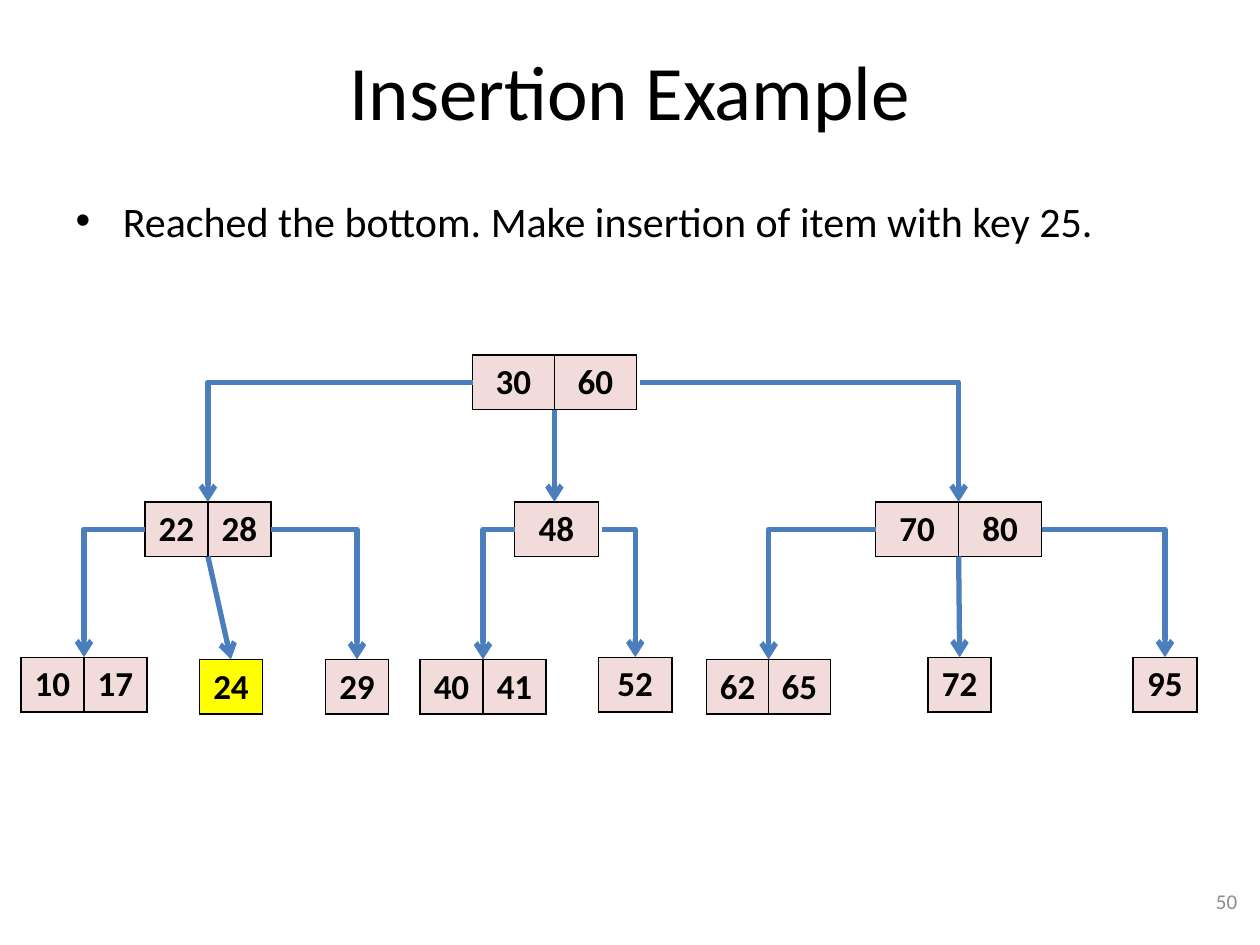
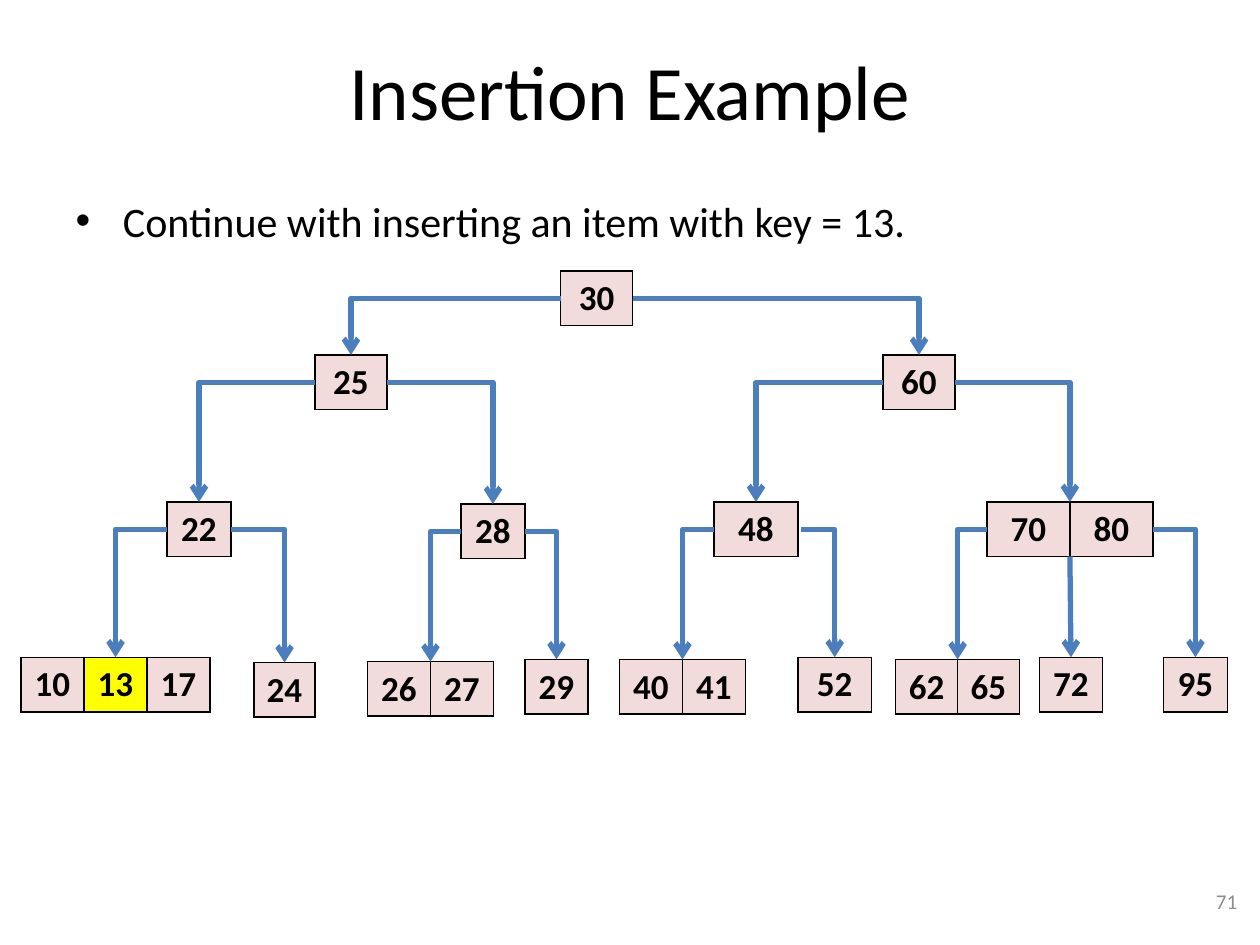
from dataclasses import dataclass

from lxml.etree import SubElement
from pptx import Presentation
from pptx.dml.color import RGBColor
from pptx.enum.shapes import MSO_CONNECTOR
from pptx.enum.text import MSO_ANCHOR, PP_ALIGN
from pptx.oxml.ns import qn
from pptx.util import Inches, Pt


@dataclass(frozen=True)
class Theme:
    font: str = "Calibri"
    ink: str = "000000"
    muted: str = "8C8C8C"
    key_fill: str = "F2DCDB"
    new_fill: str = "FFFF00"
    arrow: str = "4B7EBC"
    title_size: int = 44
    body_size: int = 24
    key_size: int = 20
    number_size: int = 12
    border_width: float = 1
    arrow_width: float = 3


@dataclass
class Node:
    """A tree node; lengths are in grid columns and rows."""
    keys: str
    left: float
    top: float
    cell: float = 6
    children: tuple = ()
    new_key: str = ""
    gap: float = 0    # space before the right-hand arrow
    entry: float = 0  # shift of the incoming arrow from the centre

    @property
    def right(self):
        return self.left + self.cell * len(self.keys.split())

    @property
    def center(self):
        return (self.left + self.right) / 2


# Grid: twelve units to the inch
COLUMNS, ROWS = 120, 90
ROW_HEIGHT, DRAWN_HEIGHT = 4.9, 5.2

# Tops of the tree levels
ROOT, UPPER, MIDDLE, LEAF, LOW_LEAF = 25.8, 33.8, 47.8, 62.6, 62.8


def write(frame, text, size, color=Theme.ink, bold=False, align=None, anchor=None):
    frame.word_wrap = True
    if anchor is not None:
        frame.vertical_anchor = anchor
    paragraph = frame.paragraphs[0]
    if align is not None:
        paragraph.alignment = align
    run = paragraph.add_run()
    run.text = text
    run.font.name = Theme.font
    run.font.size = Pt(size)
    run.font.bold = bold
    run.font.color.rgb = RGBColor.from_string(color)


class TreeDeck:
    def __init__(self, theme):
        self.theme = theme
        self.deck = Presentation()
        self.deck.slide_width, self.deck.slide_height = Inches(10), Inches(7.5)
        self.slide = None

    def x(self, columns):
        return round(self.deck.slide_width * columns / COLUMNS)

    def y(self, rows):
        return round(self.deck.slide_height * rows / ROWS)

    def box(self, left, top, width, height):
        return self.x(left), self.y(top), self.x(width), self.y(height)

    def place(self, holder, *area):
        holder.left, holder.top, holder.width, holder.height = self.box(*area)
        return holder.text_frame

    def add_slide(self, title, message, number):
        theme = self.theme
        self.slide = self.deck.slides.add_slide(self.deck.slide_layouts[1])
        heading, body = self.slide.placeholders
        write(self.place(heading, 6, 1, 108, 15), title, theme.title_size,
              align=PP_ALIGN.CENTER, anchor=MSO_ANCHOR.MIDDLE)
        write(self.place(body, 6, 18, 108, 66), message, theme.body_size)
        footer = self.slide.shapes.add_textbox(*self.box(91, 83.4, 28, 4.8))
        write(footer.text_frame, number, theme.number_size, color=theme.muted,
              align=PP_ALIGN.RIGHT, anchor=MSO_ANCHOR.MIDDLE)

    def border(self, cell):
        properties = cell._tc.get_or_add_tcPr()
        for side in ("lnL", "lnR", "lnT", "lnB"):
            line = SubElement(properties, qn(f"a:{side}"),
                              w=str(Pt(self.theme.border_width)))
            fill = SubElement(line, qn("a:solidFill"))
            SubElement(fill, qn("a:srgbClr"), val=self.theme.ink)

    def add_keys(self, node):
        theme, keys = self.theme, node.keys.split()
        table = self.slide.shapes.add_table(
            1, len(keys),
            *self.box(node.left, node.top, node.right - node.left, ROW_HEIGHT)).table
        table.first_row = table.horz_banding = False
        for column, key in enumerate(keys):
            table.columns[column].width = self.x(node.cell)
            cell = table.cell(0, column)
            self.border(cell)
            fill = theme.new_fill if key == node.new_key else theme.key_fill
            cell.fill.solid()
            cell.fill.fore_color.rgb = RGBColor.from_string(fill)
            write(cell.text_frame, key, theme.key_size, bold=True,
                  align=PP_ALIGN.CENTER)

    def add_arrow(self, start, end, bent):
        (x1, y1), (x2, y2) = start, end
        leftward = bent and x2 < x1
        if leftward:
            x1, x2 = x2, x1
        kind = MSO_CONNECTOR.ELBOW if bent else MSO_CONNECTOR.STRAIGHT
        arrow = self.slide.shapes.add_connector(
            kind, self.x(x1), self.y(y1), self.x(x2), self.y(y2))
        arrow.line.color.rgb = RGBColor.from_string(self.theme.arrow)
        arrow.line.width = Pt(self.theme.arrow_width)
        properties = arrow._element.spPr
        if bent:
            properties.find(qn("a:prstGeom")).set("prst", "bentConnector2")
        if leftward:
            frame = properties.find(qn("a:xfrm"))
            frame.set("rot", "10800000")
            frame.set("flipV", "1")
        SubElement(properties.find(qn("a:ln")), qn("a:tailEnd"), type="arrow")
        SubElement(properties, qn("a:effectLst"))

    def add_tree(self, node):
        self.add_keys(node)
        side = node.top + DRAWN_HEIGHT / 2
        last = len(node.children) - 1
        for index, child in enumerate(node.children):
            self.add_tree(child)
            # First child hangs from the left side, last from the right
            bent = index in (0, last)
            if index == 0:
                start = node.left, side
            elif index == last:
                start = node.right + node.gap, side
            else:
                start = node.center, node.top + DRAWN_HEIGHT
            self.add_arrow(start, (child.center + child.entry, child.top), bent)


def branch_48(left, entry=0.0):
    leaves = (Node("40 41", left - 9, LOW_LEAF), Node("52", left + 8, LEAF, 7))
    return Node("48", left, MIDDLE, 8, leaves, gap=0.3, entry=entry)


def branch_70_80(left, left_62, left_95):
    leaves = (Node("62 65", left_62, LOW_LEAF, 5.9),
              Node("72", left + 5, LEAF),
              Node("95", left_95, LEAF, 6.1))
    return Node("70 80", left, MIDDLE, 7.9, leaves)


def tree_with_25_pending():
    branch_22_28 = Node("22 28", 13.8, MIDDLE, children=(
        Node("10 17", 2, LEAF),
        Node("24", 19, LOW_LEAF, new_key="24"),
        Node("29", 31, LOW_LEAF)))
    return Node("30 60", 45, UPPER, 7.8, gap=0.4, children=(
        branch_22_28, branch_48(49, entry=-0.2), branch_70_80(83.4, 67.3, 107.9)))


def tree_with_13_inserted():
    branch_22 = Node("22", 15.9, MIDDLE, 6.1, (
        Node("10 13 17", 2, LEAF, new_key="13"),
        Node("24", 24.2, 63.1, 5.8)))
    branch_28 = Node("28", 43.9, 48, 6.1, (
        Node("26 27", 35, 63), Node("29", 50, LOW_LEAF)))
    branch_25 = Node("25", 30, UPPER, 6.85, (branch_22, branch_28))
    branch_60 = Node("60", 84.1, UPPER, 6.85, (
        branch_48(68), branch_70_80(94, 85.3, 110.8)))
    return Node("30", 53.4, ROOT, 6.85, (branch_25, branch_60))


def main():
    deck = TreeDeck(Theme())
    steps = (
        ("Reached the bottom. Make insertion of item with key 25.", "50",
         tree_with_25_pending()),
        ("Continue with inserting an item with key = 13.", "71",
         tree_with_13_inserted()),
    )
    for message, number, tree in steps:
        deck.add_slide("Insertion Example", message, number)
        deck.add_tree(tree)
    deck.deck.save("out.pptx")


if __name__ == "__main__":
    main()
